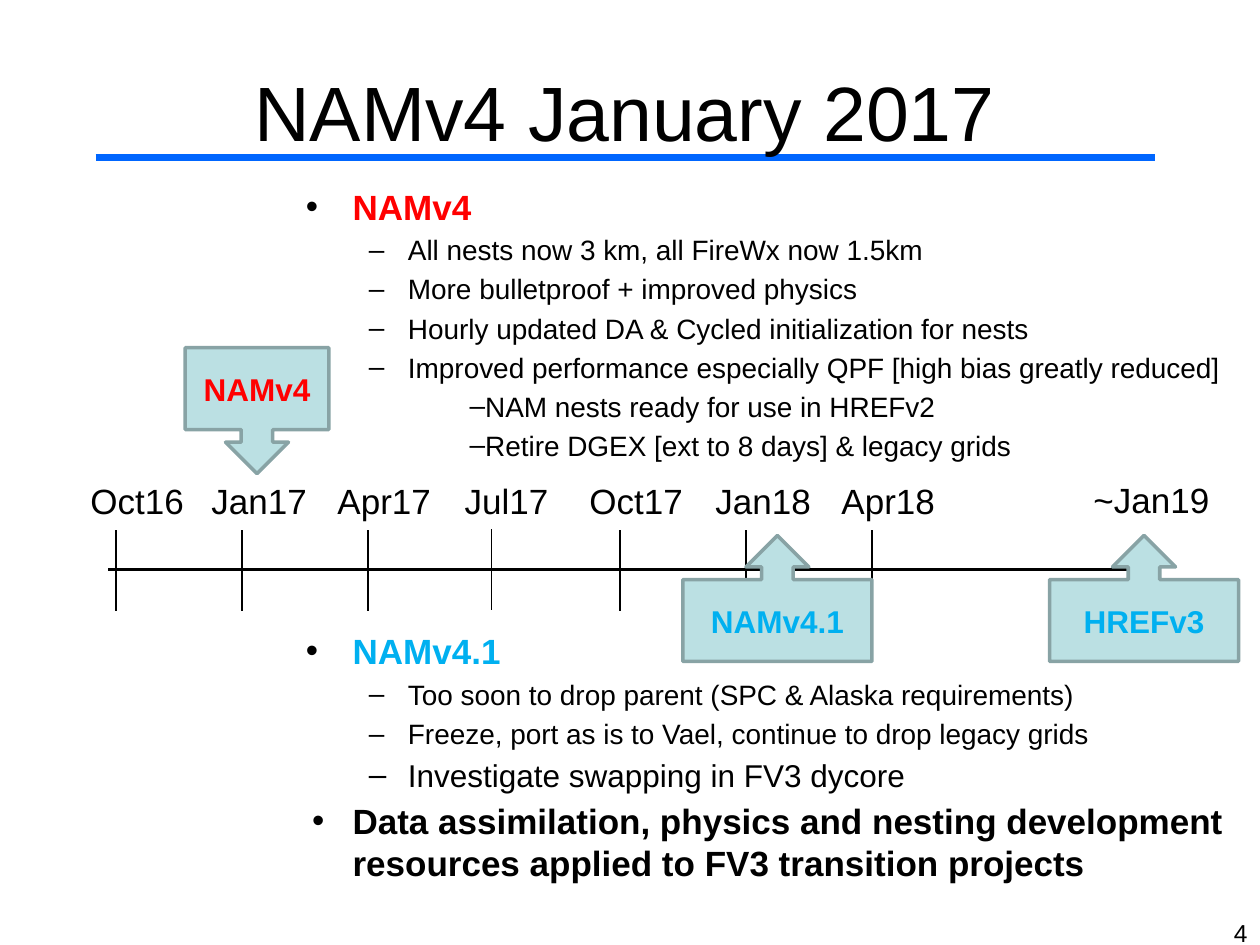
from dataclasses import dataclass

from lxml.etree import SubElement
from pptx import Presentation
from pptx.dml.color import RGBColor
from pptx.enum.shapes import MSO_CONNECTOR, MSO_SHAPE
from pptx.enum.text import MSO_ANCHOR, PP_ALIGN
from pptx.oxml.ns import qn
from pptx.util import Inches, Pt


@dataclass(frozen=True)
class Theme:
    font: str = "Arial"
    black: RGBColor = RGBColor.from_string("000000")
    red: RGBColor = RGBColor.from_string("FF0000")
    sky: RGBColor = RGBColor.from_string("00B0F0")
    rule: RGBColor = RGBColor.from_string("0066FF")
    callout_fill: RGBColor = RGBColor.from_string("BBE0E3")
    callout_edge: RGBColor = RGBColor.from_string("88A3A5")
    title: int = 44
    heading: int = 20
    label: int = 18
    detail: int = 16
    number: int = 14


theme = Theme()


def add_run(paragraph, text, size, color=theme.black, bold=False):
    run = paragraph.add_run()
    run.text = text
    run.font.name = theme.font
    run.font.size = Pt(size)
    run.font.bold = bold
    run.font.color.rgb = color


def add_line(x1, y1, x2, y2, width, color=theme.black):
    """Draw a connector without a shadow; lengths in inches, width in points."""
    line = slide.shapes.add_connector(
        MSO_CONNECTOR.STRAIGHT, Inches(x1), Inches(y1), Inches(x2), Inches(y2))
    line.line.width = Pt(width)
    line.line.color.rgb = color
    SubElement(line.element.spPr, qn("a:effectLst"))
    return line


prs = Presentation()
prs.slide_width, prs.slide_height = Inches(10), Inches(7.5)
slide = prs.slides.add_slide(prs.slide_layouts[5])

# Title, with the rule behind it
title = slide.shapes.title
title.left, title.top = Inches(0.46), Inches(0.25)
title.width, title.height = Inches(9), Inches(1.25)
title.text_frame.vertical_anchor = MSO_ANCHOR.MIDDLE
title.text_frame.paragraphs[0].alignment = PP_ALIGN.CENTER
add_run(title.text_frame.paragraphs[0], "NAMv4 January 2017", theme.title)
title_rule = add_line(0.76, 1.25, 9.17, 1.25, 4.5, theme.rule)
title.element.addprevious(title_rule.element)

# Bullet styles: level, left margin, first-line indent, space before, symbol
bullet_styles = {
    "heading": (0, 0.37, -0.37, 4, "•"),
    "detail": (1, 0.81, -0.31, 3.2, "–"),
    "inset": (1, 0.81, 0.49, 3.2, "–"),
    "closing": (0, 0.37, -0.32, 3.2, "•"),
}
plain = (theme.detail, theme.black, False)
release_notes = [
    (1.42, 2.3, [
        ("heading", "NAMv4", (theme.heading, theme.red, True)),
        ("detail", "All nests now 3 km, all FireWx now 1.5km", plain),
        ("detail", "More bulletproof + improved physics", plain),
        ("detail", "Hourly updated DA & Cycled initialization for nests", plain),
        ("detail", "Improved performance especially QPF [high bias greatly reduced]", plain),
        ("inset", "NAM nests ready for use in HREFv2", plain),
        ("inset", "Retire DGEX [ext to 8 days] & legacy grids", plain),
    ]),
    (4.95, 2.1, [
        ("heading", "NAMv4.1", (theme.heading, theme.sky, True)),
        ("detail", "Too soon to drop parent (SPC & Alaska requirements)", plain),
        ("detail", "Freeze, port as is to Vael, continue to drop legacy grids", plain),
        ("detail", "Investigate swapping in FV3 dycore", (theme.label, theme.black, False)),
        ("closing", "Data assimilation, physics and nesting development resources "
                    "applied to FV3 transition projects", (theme.heading, theme.black, True)),
    ]),
]
for top, height, notes in release_notes:
    frame = slide.shapes.add_textbox(
        Inches(2.33), Inches(top), Inches(7.54), Inches(height)).text_frame
    frame.word_wrap = True
    for i, (style, text, look) in enumerate(notes):
        level, margin, indent, space, symbol = bullet_styles[style]
        paragraph = frame.add_paragraph() if i else frame.paragraphs[0]
        paragraph.level = level
        if i:
            paragraph.space_before = Pt(space)
        properties = paragraph._p.get_or_add_pPr()
        properties.set("marL", str(Inches(margin)))
        properties.set("indent", str(Inches(indent)))
        bullet_color = SubElement(properties, qn("a:buClr"))
        SubElement(bullet_color, qn("a:srgbClr")).set("val", str(theme.black))
        SubElement(properties, qn("a:buFont")).set("typeface", theme.font)
        SubElement(properties, qn("a:buChar")).set("char", symbol)
        add_run(paragraph, text, *look)

# Timeline: axis, quarterly ticks and dates
axis = add_line(0.86, 4.52, 9.12, 4.52, 1.5)
SubElement(axis.line._get_or_add_ln(), qn("a:tailEnd")).set("type", "triangle")
for quarter in range(7):
    x, top = (3.9, 4.2) if quarter == 3 else (0.92 + quarter, 4.21)
    add_line(x, top, x, top + 0.64, 0.75)

dates = [
    ("Oct16", 0.62, 3.76), ("Jan17", 1.58, 3.76), ("Apr17", 2.58, 3.76),
    ("Jul17", 3.59, 3.76), ("Oct17", 4.58, 3.76), ("Jan18", 5.58, 3.76),
    ("Apr18", 6.58, 3.76), ("~Jan19", 8.58, 3.75),
]
for date, left, top in dates:
    width = 1.15 if date.startswith("~") else 1
    frame = slide.shapes.add_textbox(
        Inches(left), Inches(top), Inches(width), Inches(0.44)).text_frame
    frame.word_wrap = True
    add_run(frame.paragraphs[0], date, theme.heading)

# Release callouts
releases = [
    ("NAMv4", MSO_SHAPE.DOWN_ARROW_CALLOUT, 1.47, 2.76, 1.14, theme.red),
    ("HREFv3", MSO_SHAPE.UP_ARROW_CALLOUT, 8.33, 4.25, 1.5, theme.sky),
    ("NAMv4.1", MSO_SHAPE.UP_ARROW_CALLOUT, 5.42, 4.25, 1.5, theme.sky),
]
for release, arrow, left, top, width, color in releases:
    callout = slide.shapes.add_shape(
        arrow, Inches(left), Inches(top), Inches(width), Inches(1))
    callout.shadow.inherit = False
    callout.fill.solid()
    callout.fill.fore_color.rgb = theme.callout_fill
    callout.line.color.rgb = theme.callout_edge
    callout.line.width = Pt(2)
    callout.text_frame.vertical_anchor = MSO_ANCHOR.MIDDLE
    callout.text_frame.paragraphs[0].alignment = PP_ALIGN.CENTER
    add_run(callout.text_frame.paragraphs[0], release, theme.label, color, True)

# Page number
page_number = slide.shapes.add_textbox(
    Inches(7.67), Inches(7.24), Inches(2.33), Inches(0.52)).text_frame
page_number.word_wrap = True
page_number.paragraphs[0].alignment = PP_ALIGN.RIGHT
add_run(page_number.paragraphs[0], "4", theme.number)

prs.save("out.pptx")
